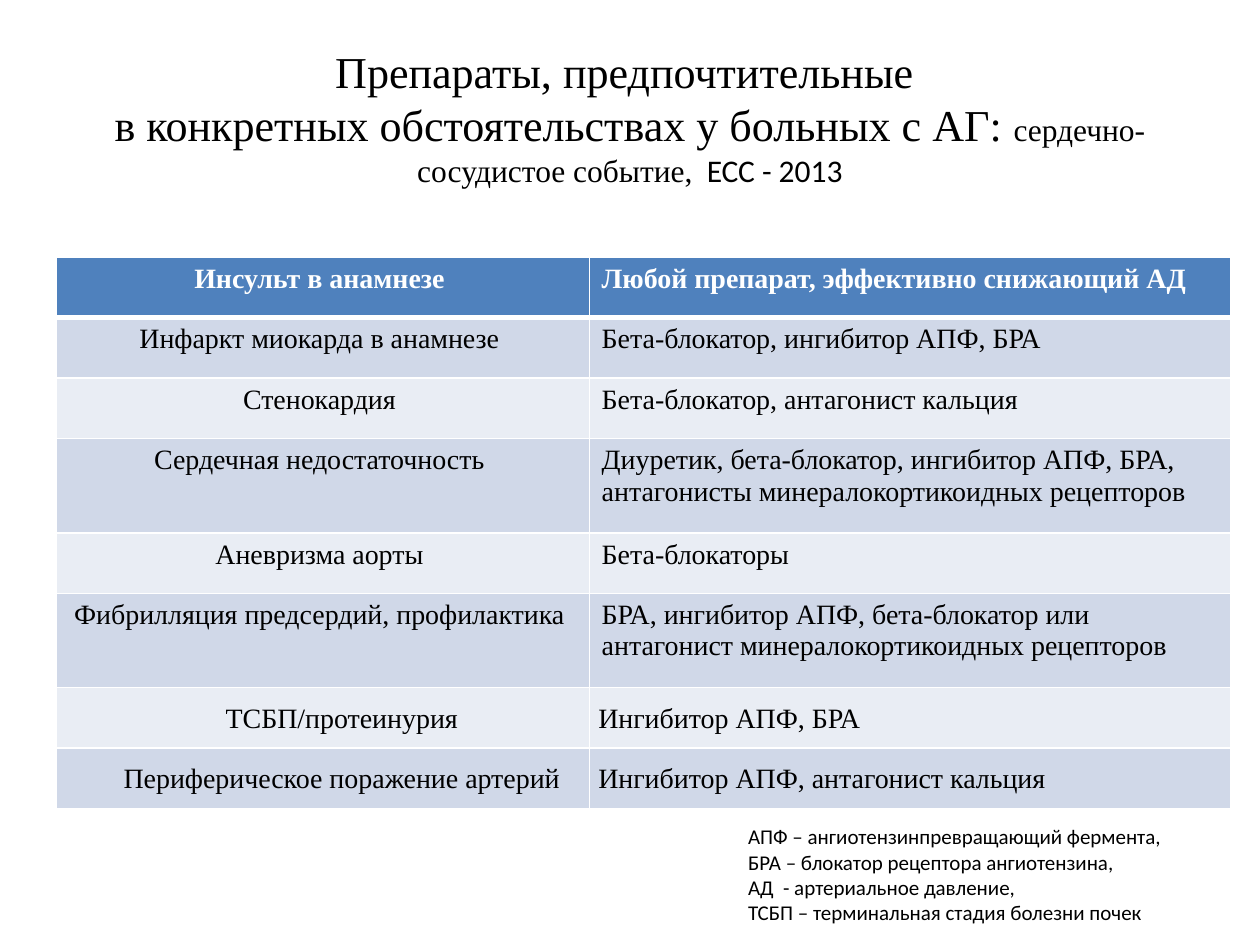
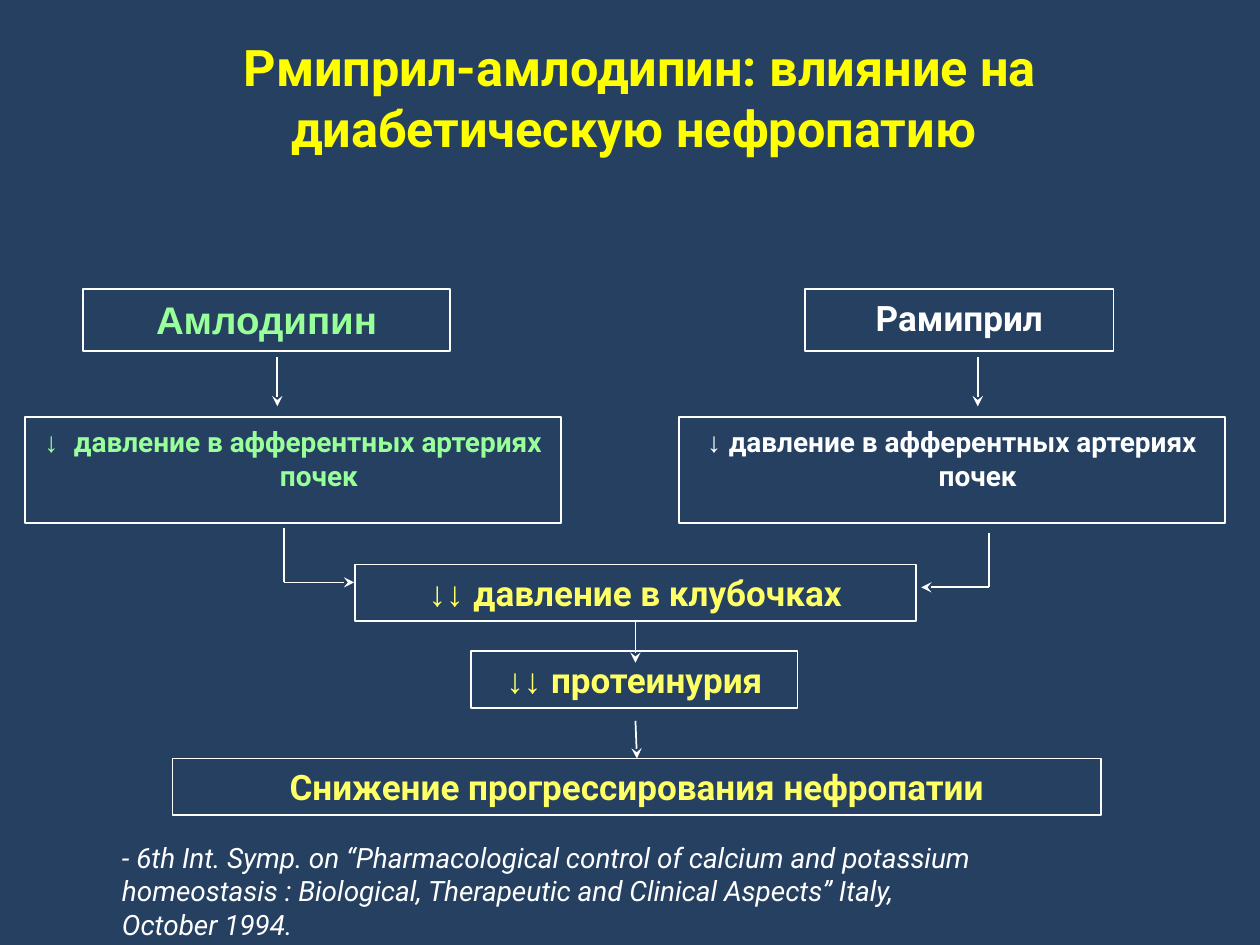
from lxml import etree
from pptx import Presentation
from pptx.dml.color import RGBColor
from pptx.enum import shapes, text
from pptx.oxml.ns import qn
from pptx.util import Cm, Pt

WHITE = RGBColor(0xFF, 0xFF, 0xFF)
BLACK = RGBColor(0, 0, 0)
NAVY = RGBColor(0x25, 0x40, 0x61)
HEADER_BLUE = RGBColor(0x4F, 0x81, 0xBD)
BAND_DARK = RGBColor(0xD0, 0xD8, 0xE8)
BAND_LIGHT = RGBColor(0xE9, 0xED, 0xF4)
TITLE_YELLOW = RGBColor(0xFF, 0xFF, 0)
YELLOW = RGBColor(0xFF, 0xFF, 0x66)
GREEN = RGBColor(0x99, 0xFF, 0x99)

SERIF, SANS, ROBOTO, ARIAL = "Times New Roman", "Calibri", "Roboto", "Arial"
CENTER, LEFT, JUSTIFY = text.PP_ALIGN.CENTER, text.PP_ALIGN.LEFT, text.PP_ALIGN.JUSTIFY
TIGHT = (0.28, 0.15)

TREATMENTS = [
    ("Инсульт в анамнезе ", "Любой препарат, эффективно снижающий АД"),
    ("Инфаркт миокарда в анамнезе ", "Бета-блокатор, ингибитор АПФ, БРА"),
    ("Стенокардия ", "Бета-блокатор, антагонист кальция"),
    ("Сердечная недостаточность ",
     "Диуретик, бета-блокатор, ингибитор АПФ, БРА, антагонисты минералокортикоидных рецепторов"),
    ("Аневризма аорты ", "Бета-блокаторы"),
    ("Фибрилляция предсердий, профилактика ",
     "БРА, ингибитор АПФ, бета-блокатор или антагонист минералокортикоидных рецепторов"),
    ("ТСБП/протеинурия", "Ингибитор АПФ, БРА"),
    ("Периферическое поражение артерий", "Ингибитор АПФ, антагонист кальция"),
]
TALL_ROWS = (3, 5)
SPACED_ROWS = (6, 7)


def write(tf, paragraphs, size=16, font=ROBOTO, color=WHITE, bold=False, italic=False,
          align=LEFT, anchor=text.MSO_ANCHOR.TOP, margins=(0.25, 0.13),
          left=0, hanging=0, spacing=None):
    """Each paragraph is a string or a list of (string, overrides); \\n breaks a line."""
    tf.word_wrap = True
    tf.vertical_anchor = anchor
    tf.margin_left = tf.margin_right = Cm(margins[0])
    tf.margin_top = tf.margin_bottom = Cm(margins[1])
    for i, runs in enumerate(paragraphs):
        p = tf.add_paragraph() if i else tf.paragraphs[0]
        p.alignment = align
        if spacing:
            p.line_spacing = spacing
        if left:
            pPr = p._p.get_or_add_pPr()
            pPr.set("marL", str(Cm(left)))
            pPr.set("indent", str(-Cm(hanging)))
        for words, own in [(runs, {})] if isinstance(runs, str) else runs:
            for k, line in enumerate(words.split("\n")):
                if k:
                    p.add_line_break()
                r = p.add_run()
                r.text = line
                f = r.font
                f.size = Pt(own.get("size", size))
                f.name = own.get("font", font)
                f.color.rgb = color
                f.bold, f.italic = bold, italic


def text_box(s, box, paragraphs, **fmt):
    sp = s.shapes.add_textbox(*map(Cm, box))
    write(sp.text_frame, paragraphs, **fmt)


def title(s, box, runs, **fmt):
    text_box(s, box, [runs], align=CENTER, anchor=text.MSO_ANCHOR.MIDDLE, **fmt)


def new_slide(prs, color):
    s = prs.slides.add_slide(prs.slide_layouts[6])
    s.background.fill.solid()
    s.background.fill.fore_color.rgb = color
    return s


# Table slide
def cell_borders(cell, top, bottom):
    tcPr = cell._tc.get_or_add_tcPr()
    for i, (side, width) in enumerate((("L", 1), ("R", 1), ("T", top), ("B", bottom))):
        ln = etree.Element(qn(f"a:ln{side}"), w=str(Pt(width)))
        fill = etree.SubElement(ln, qn("a:solidFill"))
        etree.SubElement(fill, qn("a:srgbClr"), val=str(WHITE))
        tcPr.insert(i, ln)


def treatment_table(s, x, y, widths):
    heights = [1.9 if i in TALL_ROWS else 1.22 for i in range(len(TREATMENTS))]
    frame = s.shapes.add_table(len(heights), len(widths), Cm(x), Cm(y),
                               Cm(sum(widths)), Cm(sum(heights)))
    table = frame.table
    for col, width in zip(table.columns, widths):
        col.width = Cm(width)
    for i, (row, height) in enumerate(zip(table.rows, heights)):
        row.height = Cm(height)
        spaced = i in SPACED_ROWS
        for j, cell in enumerate(row.cells):
            cell.fill.solid()
            cell.fill.fore_color.rgb = (HEADER_BLUE if i == 0 else
                                        BAND_DARK if i % 2 else BAND_LIGHT)
            cell_borders(cell, 3 if i == 1 else 1, 3 if i == 0 else 1)
            write(cell.text_frame, [TREATMENTS[i][j]], font=SERIF,
                  color=BLACK if i else WHITE, bold=i == 0,
                  align=CENTER if j == 0 else JUSTIFY if spaced else LEFT,
                  left=0.76 if spaced and j == 0 else 0,
                  spacing=1.5 if spaced else None)
            mx, my = (0.18, 0) if spaced else (0.25, 0.13)
            cell.margin_left = cell.margin_right = Cm(mx)
            cell.margin_top = cell.margin_bottom = Cm(my)


def treatment_slide(prs):
    s = new_slide(prs, WHITE)
    title(s, (1.27, 0.76, 22.86, 3.18),
          [("Препараты, предпочтительные \nв конкретных обстоятельствах у больных с АГ: ", {}),
           ("сердечно-сосудистое событие,", {"size": 18}),
           ("  ЕСС - 2013", {"size": 18, "font": SANS})],
          size=25.2, font=SERIF, color=BLACK)
    treatment_table(s, 1.14, 5.18, (10.74, 12.93))
    text_box(s, (14.83, 16.48, 9.86, 2.31),
             ["АПФ – ангиотензинпревращающий фермента,",
              "БРА – блокатор рецептора ангиотензина,",
              "АД  - артериальное давление,",
              "ТСБП – терминальная стадия болезни почек"],
             size=12, font=SANS, color=BLACK)


# Flow chart slide
def flow_box(s, box, runs, **fmt):
    sp = s.shapes.add_shape(shapes.MSO_SHAPE.RECTANGLE, *map(Cm, box))
    sp.shadow.inherit = False
    sp.fill.background()
    sp.line.color.rgb = WHITE
    sp.line.width = Pt(1)
    write(sp.text_frame, [runs], bold=True, align=CENTER, margins=TIGHT,
          left=1.04, hanging=1.04, **fmt)
    return sp


def line(s, start, end, arrow=True):
    c = s.shapes.add_connector(shapes.MSO_CONNECTOR.STRAIGHT, *map(Cm, start + end))
    c.line.color.rgb = WHITE
    c.line.width = Pt(1)
    if arrow:
        etree.SubElement(c.line._get_or_add_ln(), qn("a:tailEnd"), type="stealth")
    etree.SubElement(c._element.spPr, qn("a:effectLst"))
    return c


def drug_branch(s, x, y, width, drug, drug_dx, drug_width, drug_size, drug_font, gap,
                color, arrow_dx, elbow_dx, elbow_dy, elbow_end):
    flow_box(s, (x + drug_dx, y, drug_width, 1.26), drug,
             size=drug_size, font=drug_font, color=color)
    line(s, (x + arrow_dx, y + 1.38), (x + arrow_dx, y + 2.37))
    flow_box(s, (x, y + 2.59, width, 2.13),
             [("↓" + gap, {"font": ARIAL}), ("давление в афферентных артериях почек", {})],
             color=color)
    # Bend towards the common effect
    corner = (x + elbow_dx, y + elbow_dy + 1.1)
    line(s, (x + elbow_dx, y + elbow_dy), corner, arrow=False)
    line(s, corner, (x + elbow_end, corner[1]))


def common_effects(s, x, y):
    fmt = dict(size=20, color=YELLOW)
    down = ("↓↓ ", {"font": ARIAL})
    pressure = flow_box(s, (x + 3.68, y, 11.3, 1.14), [down, ("давление в клубочках", {})], **fmt)
    flow_box(s, (x + 6.02, y + 1.75, 6.58, 1.14), [down, ("протеинурия", {})], **fmt)
    outcome = flow_box(s, (x, y + 3.91, 18.72, 1.14),
                       "Снижение прогрессирования нефропатии", **fmt)
    axis = x + 9.33
    line(s, (axis, y + 1.14), (axis, y + 1.98)).begin_connect(pressure, 2)
    line(s, (axis, y + 3.15), (axis, y + 3.91)).end_connect(outcome, 0)


def nephropathy_slide(prs):
    s = new_slide(prs, NAVY)
    title(s, (1.02, 0.94, 23.77, 2.03),
          "Рмиприл-амлодипин: влияние на диабетическую нефропатию ",
          size=28.8, color=TITLE_YELLOW, bold=True, margins=TIGHT)
    drug_branch(s, 0.51, 5.82, 10.8, "Амлодипин", 1.17, 7.39, 22, ARIAL, "  ", GREEN,
                arrow_dx=5.08, elbow_dx=5.21, elbow_dy=4.82, elbow_end=6.63)
    drug_branch(s, 13.69, 5.82, 11, "Рамиприл", 2.54, 6.22, 20, ROBOTO, " ", WHITE,
                arrow_dx=6.02, elbow_dx=6.25, elbow_dy=4.92, elbow_end=4.88)
    common_effects(s, 3.48, 11.38)
    text_box(s, (2.21, 16.81, 18.11, 1.63),
             ["- 6th Int. Symp. on “Pharmacological control of calcium and potassium",
              "homeostasis : Biological, Therapeutic and Clinical Aspects” Italy, October 1994."],
             italic=True)


def main():
    prs = Presentation()
    prs.slide_width, prs.slide_height = Cm(25.4), Cm(19.05)
    treatment_slide(prs)
    nephropathy_slide(prs)
    prs.save("out.pptx")


if __name__ == "__main__":
    main()
